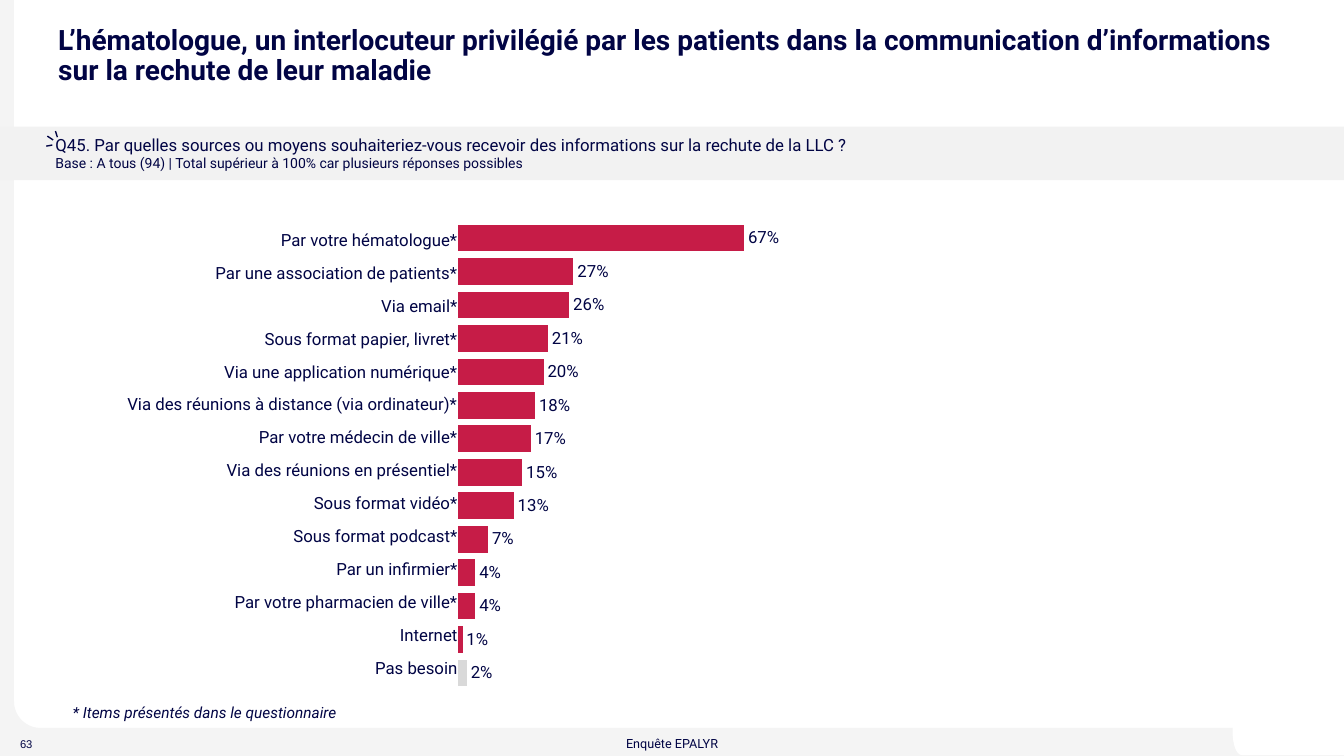
import math
from dataclasses import dataclass

from lxml import etree
from pptx import Presentation
from pptx import util as u
from pptx.chart.data import CategoryChartData
from pptx.dml.color import RGBColor
from pptx.enum import chart as charts
from pptx.enum import shapes, text
from pptx.oxml.ns import qn

Pt = u.Pt
COLORS = {
    "navy": "010444",
    "frame": "F4F4F4",
    "band": "F2F2F2",
    "white": "FFFFFF",
    "red": "C61C47",
    "grey": "D9D9D9",
}
NO_GRID_STYLE = "{2D5ABB26-0587-4C30-8999-92F81FD0307C}"
ROW_HEIGHT = 23.5


@dataclass(frozen=True)
class Run:
    words: str
    size: float
    font: str = "Roboto"
    bold: bool = False
    italic: bool = False


@dataclass(frozen=True)
class Block:
    left: float
    top: float
    width: float
    height: float
    lines: tuple[Run, ...]
    shape: shapes.MSO_SHAPE | None = None
    fill: str | None = None
    align: text.PP_ALIGN = text.PP_ALIGN.LEFT
    anchor: text.MSO_ANCHOR = text.MSO_ANCHOR.MIDDLE
    insets: tuple[float, float] = (7.2, 3.6)
    spacing: float = 1.0


@dataclass(frozen=True)
class Source:
    label: str
    share: float
    color: str = "red"


@dataclass(frozen=True)
class Spark:
    x1: float
    y1: float
    x2: float
    y2: float


SOURCES = [
    Source("Par votre hématologue*", 0.67),
    Source("Par une association de patients*", 0.27),
    Source("Via email*", 0.26),
    Source("Sous format papier, livret*", 0.21),
    Source("Via une application numérique*", 0.20),
    Source("Via des réunions à distance (via ordinateur)*", 0.18),
    Source("Par votre médecin de ville*", 0.17),
    Source("Via des réunions en présentiel*", 0.15),
    Source("Sous format vidéo*", 0.13),
    Source("Sous format podcast*", 0.07),
    Source("Par un infirmier*", 0.04),
    Source("Par votre pharmacien de ville*", 0.04),
    Source("Internet", 0.01),
    Source("Pas besoin", 0.02, "grey"),
]
SPARKS = [
    Spark(33.8, 97.2, 38, 100),
    Spark(39.6, 93.6, 41, 98),
    Spark(33.1, 104.4, 37.4, 103.6),
]
FOOTER = Block(163.5, 526, 633, 10, (Run("Enquête EPALYR", 9),), align=text.PP_ALIGN.CENTER)
PAGE_NUMBER = Block(7.2, 518.5, 29.5, 26, (Run("63", 8, "Arial"),))
TITLE = Block(
    34.5, 15, 891.5, 60,
    (Run("L’hématologue, un interlocuteur privilégié par les patients dans la "
         "communication d’informations sur la rechute de leur maladie", 20, bold=True),),
    anchor=text.MSO_ANCHOR.TOP, spacing=0.9,
)
QUESTION = Block(
    0, 90.5, 960, 38.2,
    (Run("Q45. Par quelles sources ou moyens souhaiteriez-vous recevoir des "
         "informations sur la rechute de la LLC ?", 12),
     Run("Base : A tous (94) | Total supérieur à 100% car plusieurs réponses possibles", 10)),
    shape=shapes.MSO_SHAPE.RECTANGLE, fill="band",
    anchor=text.MSO_ANCHOR.TOP, insets=(39.6, 5.76),
)
FOOTNOTE = Block(
    0, 497, 292.5, 23, (Run("* Items présentés dans le questionnaire", 11, italic=True),),
    shape=shapes.MSO_SHAPE.ROUNDED_RECTANGLE, align=text.PP_ALIGN.CENTER,
)


def rgb(name: str) -> RGBColor:
    return RGBColor.from_string(COLORS[name])


def add_run(paragraph, run: Run) -> None:
    piece = paragraph.add_run()
    piece.text = run.words
    font = piece.font
    font.name, font.size = run.font, Pt(run.size)
    font.bold, font.italic = run.bold, run.italic
    font.color.rgb = rgb("navy")


def add_block(slide, block: Block) -> None:
    place = [Pt(v) for v in (block.left, block.top, block.width, block.height)]
    if block.shape is None:
        box = slide.shapes.add_textbox(*place)
    else:
        box = slide.shapes.add_shape(block.shape, *place)
        box.shadow.inherit = False
        box.line.fill.background()
        if block.fill:
            box.fill.solid()
            box.fill.fore_color.rgb = rgb(block.fill)
        else:
            box.fill.background()
    frame = box.text_frame
    frame.word_wrap = True
    frame.vertical_anchor = block.anchor
    frame.margin_left = frame.margin_right = Pt(block.insets[0])
    frame.margin_top = frame.margin_bottom = Pt(block.insets[1])
    paragraph = frame.paragraphs[0]
    paragraph.alignment = block.align
    paragraph.line_spacing = block.spacing
    for index, run in enumerate(block.lines):
        if index:
            paragraph.add_line_break()
        add_run(paragraph, run)


def bottom_left_corner(left: float, bottom: float, rx: float, ry: float) -> list[tuple[float, float]]:
    """Points of a quarter ellipse, from the left side down to the bottom side."""
    angles = [math.radians(5 * step) for step in range(19)]
    return [(left + rx * (1 - math.cos(a)), bottom - ry * (1 - math.sin(a))) for a in angles]


def add_outline(slide, points: list[tuple[float, float]], fill: str) -> None:
    start, *rest = [(Pt(x), Pt(y)) for x, y in points]
    builder = slide.shapes.build_freeform(*start)
    builder.add_line_segments(rest, close=True)
    outline = builder.convert_to_shape()
    outline.shadow.inherit = False
    outline.fill.solid()
    outline.fill.fore_color.rgb = rgb(fill)
    outline.line.fill.background()


def add_spark(slide, spark: Spark) -> None:
    ends = [Pt(v) for v in (spark.x1, spark.y1, spark.x2, spark.y2)]
    line = slide.shapes.add_connector(shapes.MSO_CONNECTOR.STRAIGHT, *ends)
    line.line.color.rgb = rgb("navy")
    line.line.width = Pt(1)
    etree.SubElement(line.element.spPr, qn("a:effectLst"))


def add_share_chart(slide, sources: list[Source]) -> None:
    data = CategoryChartData(number_format="0%")
    data.categories = [str(n) for n in range(1, len(sources) + 1)]
    data.add_series("Series 1", [source.share for source in sources])
    chart = slide.shapes.add_chart(
        charts.XL_CHART_TYPE.BAR_CLUSTERED, Pt(321), Pt(151.2), Pt(317.5), Pt(348.5), data
    ).chart
    chart.has_legend = chart.has_title = False
    chart.font.name, chart.font.size = "Roboto", Pt(12)
    chart.font.color.rgb = rgb("navy")
    chart.category_axis.reverse_order = True
    shares = chart.value_axis
    shares.minimum_scale, shares.maximum_scale = 0, 1
    shares.has_major_gridlines = False
    chart.category_axis.visible = shares.visible = False
    plot = chart.plots[0]
    plot.gap_width = 25
    plot.vary_by_categories = False
    plot.has_data_labels = True
    labels = plot.data_labels
    labels.show_value = True
    labels.number_format, labels.number_format_is_linked = "0%", False
    labels.position = charts.XL_LABEL_POSITION.OUTSIDE_END
    for index, source in enumerate(sources):
        bar = plot.series[0].points[index].format.fill
        bar.solid()
        bar.fore_color.rgb = rgb(source.color)


def add_source_table(slide, sources: list[Source]) -> None:
    holder = slide.shapes.add_table(
        len(sources), 1, Pt(23), Pt(159.8), Pt(304.5), Pt(ROW_HEIGHT * len(sources))
    )
    table = holder.table
    table.first_row = table.horz_banding = False
    next(holder.element.iter(qn("a:tableStyleId"))).text = NO_GRID_STYLE
    for row, source in zip(table.rows, sources):
        row.height = Pt(ROW_HEIGHT)
        cell = row.cells[0]
        cell.fill.background()
        cell.vertical_anchor = text.MSO_ANCHOR.MIDDLE
        cell.margin_left = cell.margin_right = cell.margin_top = Pt(0.72)
        cell.margin_bottom = 0
        paragraph = cell.text_frame.paragraphs[0]
        paragraph.alignment = text.PP_ALIGN.RIGHT
        add_run(paragraph, Run(source.label, 12))


def main() -> None:
    deck = Presentation()
    deck.slide_width, deck.slide_height = Pt(960), Pt(540)
    slide = deck.slides.add_slide(deck.slide_layouts[6])
    page_edge = bottom_left_corner(10, 520, 19, 19)
    add_outline(slide, [(0, 0), (10, 0), *page_edge, (960, 520), (960, 540), (0, 540)], "frame")
    add_block(slide, FOOTER)
    tab_edge = bottom_left_corner(880.5, 539.3, 6.5, 16)
    add_outline(slide, [(880.5, 465), *tab_edge, (960, 539.3), (960, 465)], "white")
    for block in (PAGE_NUMBER, TITLE, QUESTION):
        add_block(slide, block)
    add_share_chart(slide, SOURCES)
    for spark in SPARKS:
        add_spark(slide, spark)
    add_source_table(slide, SOURCES)
    add_block(slide, FOOTNOTE)
    deck.save("out.pptx")


if __name__ == "__main__":
    main()
